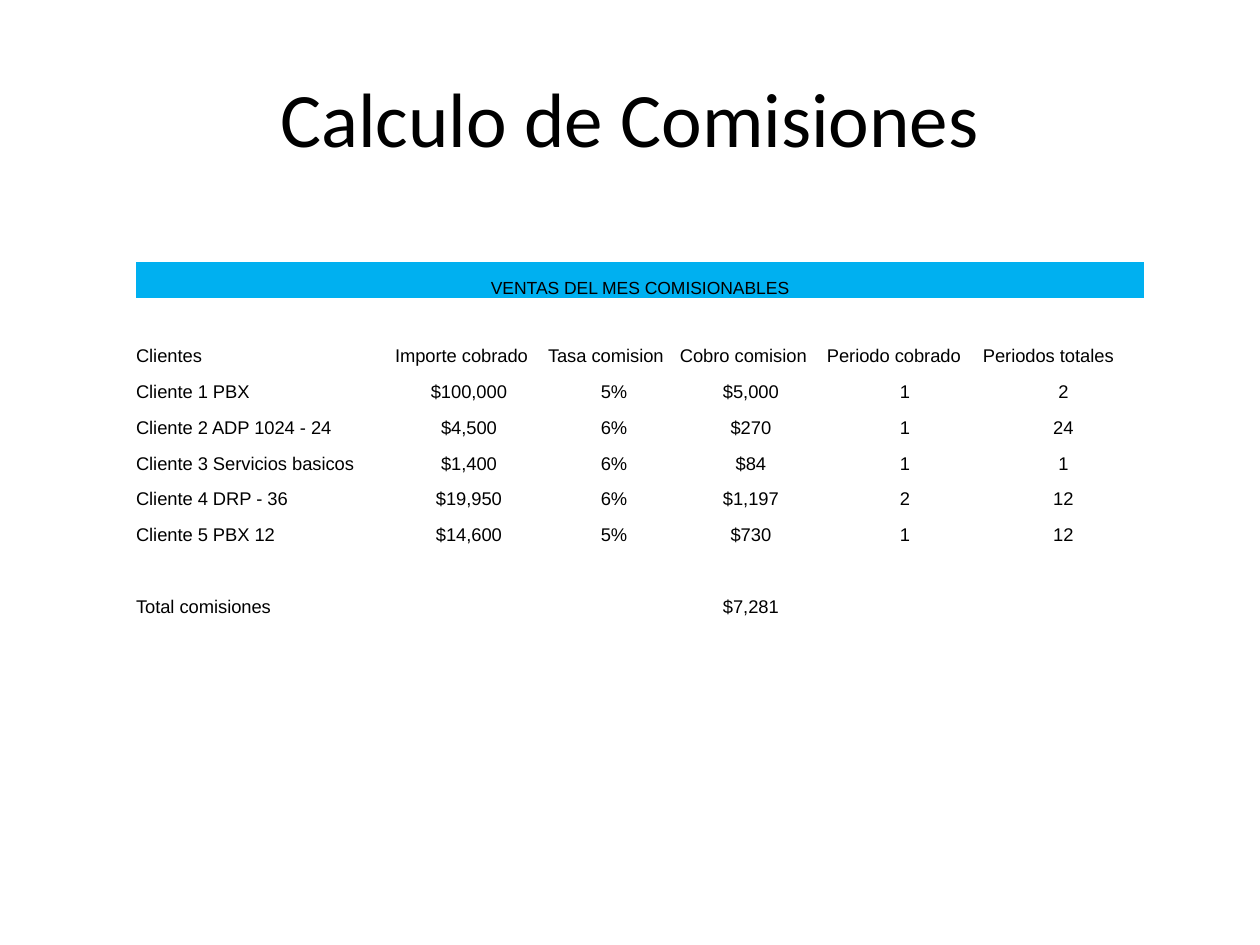
from dataclasses import dataclass

from lxml.etree import SubElement
from pptx import Presentation
from pptx.dml.color import RGBColor as Rgb
from pptx.enum.text import MSO_ANCHOR as Anchor, PP_ALIGN as Align
from pptx.oxml.ns import qn
from pptx.util import Emu, Pt

SCALE = 914400 / 126


@dataclass(frozen=True)
class Theme:
    ink: str = "000000"
    band: str = "00B0F0"
    head: str = "Calibri"
    body: str = "Arial"
    title: float = 44
    banner: float = 10
    cell: float = 10.5
    plain: str = "{2D5ABB26-0587-4C30-8999-92F81FD0307C}"


THEME = Theme()
COLS = [259, 153, 132, 147, 156, 161]
ROWS = [36, 68] + [36] * 7
HEADS = ["Clientes", "Importe cobrado", "Tasa comision", "Cobro comision",
         "Periodo cobrado", "Periodos totales"]
SALES = [
    ["Cliente 1 PBX", "$100,000 ", "5%", "$5,000 ", "1", "2"],
    ["Cliente 2 ADP 1024 - 24", "$4,500 ", "6%", "$270 ", "1", "24"],
    ["Cliente 3 Servicios basicos", "$1,400 ", "6%", "$84 ", "1", "1"],
    ["Cliente 4 DRP - 36", "$19,950 ", "6%", "$1,197 ", "2", "12"],
    ["Cliente 5 PBX 12", "$14,600 ", "5%", "$730 ", "1", "12"],
]
BLANK = [""] * 6
TOTAL = ["Total comisiones", "", "", "$7,281 ", "", ""]
BANNER = ["VENTAS DEL MES COMISIONABLES"] + [""] * 5
GRID = [BANNER, HEADS, *SALES, BLANK, TOTAL]


def px(num):
    return Emu(round(num * SCALE))


def write(frame, text, size=THEME.cell, font=THEME.body, color=THEME.ink,
          align=Align.LEFT):
    para = frame.paragraphs[0]
    para.alignment = align
    if not text:
        SubElement(para._p, qn("a:endParaRPr"), sz=str(int(size * 100)))
        return
    run = para.add_run()
    run.text = text
    run.font.size = Pt(size)
    run.font.name = font
    run.font.color.rgb = Rgb.from_string(color)


def add_title(slide, text, left, top, width, height):
    title = slide.shapes.title
    title.left, title.top = px(left), px(top)
    title.width, title.height = px(width), px(height)
    title.text_frame.vertical_anchor = Anchor.MIDDLE
    write(title.text_frame, text, size=THEME.title, font=THEME.head,
          align=Align.CENTER)


def add_sales(slide, left, top, width, height):
    table = slide.shapes.add_table(len(ROWS), len(COLS), px(left), px(top),
                                   px(width), px(height)).table
    table.first_row = table.horz_banding = False
    table._tbl.tblPr.find(qn("a:tableStyleId")).text = THEME.plain
    for col, size in zip(table.columns, COLS):
        col.width = px(width * size / sum(COLS))
    for row, size in zip(table.rows, ROWS):
        row.height = px(height * size / sum(ROWS))
    for r, line in enumerate(GRID):
        for c, text in enumerate(line):
            cell = table.cell(r, c)
            cell.margin_left = cell.margin_right = 0
            cell.margin_top = cell.margin_bottom = 0
            cell.vertical_anchor = Anchor.BOTTOM
            cell.fill.background()
            mid = r == 0 or (r > 1 and c > 0)
            write(cell.text_frame, text,
                  size=THEME.cell if r else THEME.banner,
                  align=Align.CENTER if mid else Align.LEFT)
    banner = table.cell(0, 0)
    banner.merge(table.cell(0, len(COLS) - 1))
    banner.fill.solid()
    banner.fill.fore_color.rgb = Rgb.from_string(THEME.band)


def main():
    deck = Presentation()
    deck.slide_width, deck.slide_height = px(1260), px(945)
    slide = deck.slides.add_slide(deck.slide_layouts[5])
    add_title(slide, "Calculo de Comisiones", 63, 38, 1134, 157)
    add_sales(slide, 136, 262, sum(COLS), sum(ROWS))
    deck.save("out.pptx")


if __name__ == "__main__":
    main()
